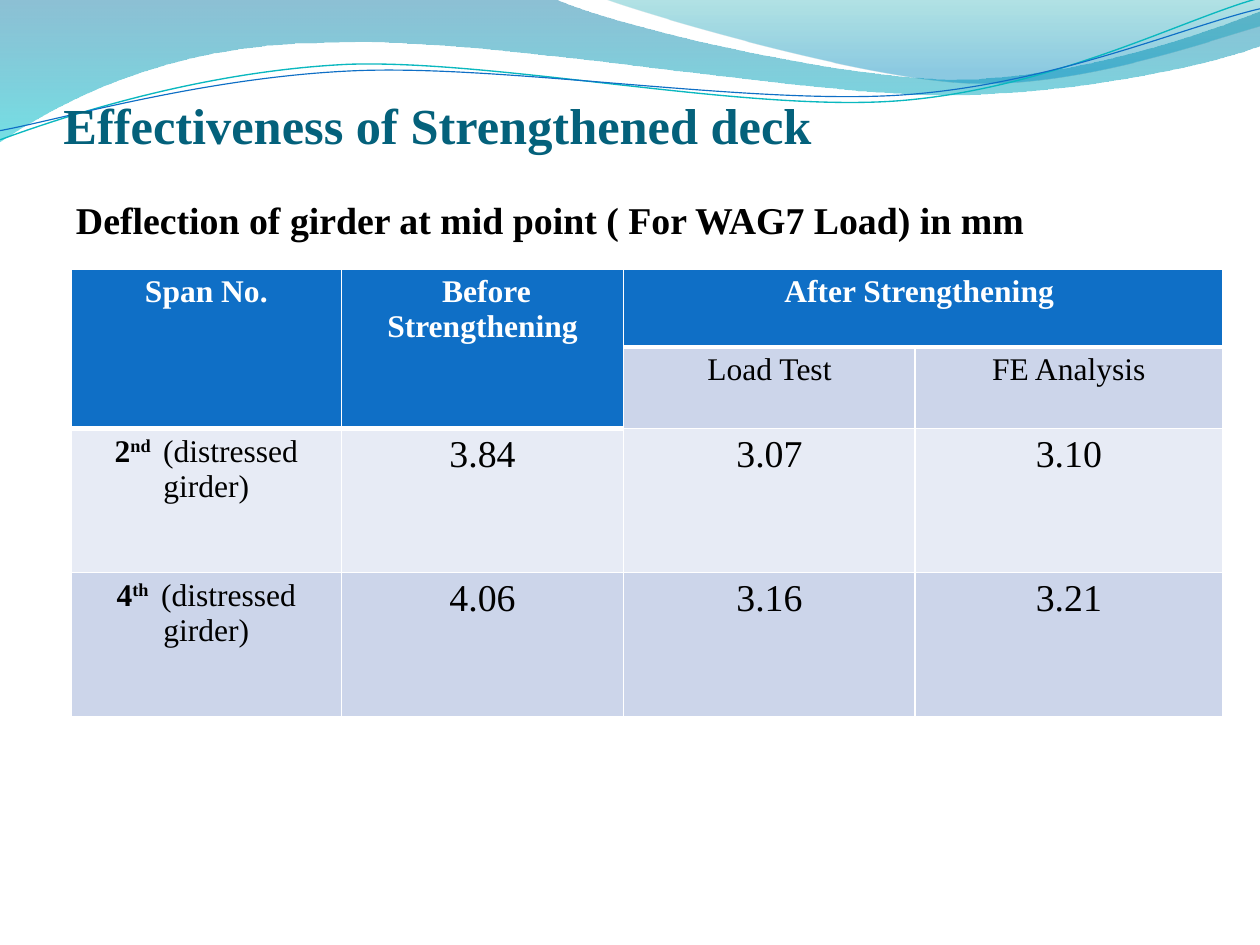
from lxml import etree
from pptx import Presentation
from pptx.dml.color import RGBColor
from pptx.enum.text import MSO_ANCHOR, MSO_AUTO_SIZE, PP_ALIGN
from pptx.oxml.ns import qn
from pptx.util import Inches, Pt

CENTER = PP_ALIGN.CENTER
LEFT = PP_ALIGN.LEFT
TOP = MSO_ANCHOR.TOP
BOTTOM = MSO_ANCHOR.BOTTOM
NO_FIT = MSO_AUTO_SIZE.NONE
FONT = "Times New Roman"
BLUE, PALE, LIGHT = "0F6FC6", "CCD5EA", "E7EBF5"
BLACK, WHITE = "000000", "FFFFFF"


def rgb(color):
    return RGBColor.from_string(color)


def add_run(p, text, size, color, bold=False, raised=False):
    r = p.add_run()
    r.text = text
    r.font.name = FONT
    r.font.size = Pt(size)
    r.font.bold = bold
    r.font.color.rgb = rgb(color)
    if raised:
        r._r.get_or_add_rPr().set("baseline", "30000")


prs = Presentation()
prs.slide_width = Inches(11.11)
prs.slide_height = Inches(8.33)
s = prs.slides.add_slide(prs.slide_layouts[1])

waves = [
    ((0, 0), [(4.89, -0.01), (5.29, 0.19, 7.37, 0.7, 8.43, 0.7),
              (9.48, 0.7, 10.65, 0.28, 11.11, 0.1), (11.12, 0.4),
              (10.93, 0.49, 9.66, 0.84, 8.29, 0.84),
              (6.91, 0.83, 4.24, 0.31, 2.86, 0.38),
              (1.44, 0.39, 0.51, 0.92, -0.01, 1.26)],
     [(0, "0074A1", 45), (1, "00C6CF", 55)], None),
    ((5.32, -0.01), [(5.66, 0.12, 7.58, 0.69, 8.54, 0.73),
                     (9.51, 0.77, 10.68, 0.35, 11.11, 0.23), (11.11, 0)],
     [(0, "00A1A9", 30), (0.8, "008BBF", 45)], None),
    ((-0.02, 0.97), [(0.52, 0.8, 1.76, 0.45, 3.08, 0.45),
                     (4.4, 0.47, 6.56, 1.04, 7.91, 1),
                     (9.25, 0.96, 10.45, 0.4, 11.11, 0.25)],
     None, ("0AB8BF", 0.85)),
    ((-0.02, 0.89), [(0.51, 0.82, 1.82, 0.5, 3.15, 0.51),
                     (4.47, 0.52, 6.63, 0.98, 7.95, 0.95),
                     (9.28, 0.92, 10.47, 0.46, 11.13, 0.34)],
     None, (BLUE, 0.75)),
]
for start, segments, stops, line in waves:
    points = [pair for segment in segments for pair in zip(segment[::2], segment[1::2])]
    builder = s.shapes.build_freeform(*start, scale=Inches(1))
    builder = s.shapes.build_freeform(Inches(start[0]), Inches(start[1]))
    builder.add_line_segments([(Inches(x), Inches(y)) for x, y in points], close=bool(stops))
    sp = builder.convert_to_shape()
    sp.shadow.inherit = False
    steps = iter(list(sp.element.iter(qn("a:lnTo"))))
    for segment in segments:
        step = next(steps)
        if len(segment) == 6:
            curve = etree.Element(qn("a:cubicBezTo"))
            step.addprevious(curve)
            for corner in (step, next(steps), next(steps)):
                curve.append(corner[0])
                corner.getparent().remove(corner)
    if stops:
        sp.line.fill.background()
        sp.fill.gradient()
        sp.fill.gradient_angle = 270
        for stop, (position, color, opacity) in zip(sp.fill.gradient_stops, stops):
            stop.position = position
            stop.color.rgb = rgb(color)
        for clr, (position, color, opacity) in zip(sp.element.iter(qn("a:srgbClr")), stops):
            etree.SubElement(clr, qn("a:alpha")).set("val", str(opacity * 1000))
    else:
        sp.rotation = 357.3
        sp.fill.background()
        sp.line.color.rgb = rgb(line[0])
        sp.line.width = Pt(line[1])

title, body = s.placeholders
headings = [
    (title, 0.86, 0.5, 0, 0, 0, BOTTOM, "Effectiveness of Strengthened deck", 32, "04617B"),
    (body, 1.67, 6.02, 0.11, 0.06, 0.56, TOP,
     "Deflection of girder at mid point ( For WAG7 Load) in mm", 24, BLACK),
]
for sp, top, height, side, bottom, hanging, anchor, text, size, color in headings:
    sp.element.getparent().append(sp.element)
    sp.left, sp.top, sp.width, sp.height = Inches(0.56), Inches(top), Inches(10), Inches(height)
    tf = sp.text_frame
    tf.auto_size = NO_FIT
    tf.word_wrap = True
    tf.vertical_anchor = anchor
    tf.margin_left = tf.margin_right = Inches(side)
    tf.margin_top, tf.margin_bottom = Inches(0.06), Inches(bottom)
    p = tf.paragraphs[0]
    pPr = p._p.get_or_add_pPr()
    pPr.set("marL", str(Inches(hanging)))
    pPr.set("indent", str(-Inches(hanging)))
    etree.SubElement(pPr, qn("a:buNone"))
    p.alignment = LEFT
    p.space_before = Pt(0)
    add_run(p, text, size, color, bold=True)

widths = [2.38, 2.49, 2.57, 2.71]
heights = [0.69, 0.69, 1.27, 1.27]
rows = [
    ["Span No.", " Before Strengthening", "After Strengthening ", ""],
    ["", "", "Load Test", "FE Analysis"],
    [("2", "nd "), "3.84", "3.07", "3.10"],
    [("4", "th "), "4.06", "3.16", "3.21"],
]
table = s.shapes.add_table(4, 4, Inches(0.63), Inches(2.37),
                           Inches(sum(widths)), Inches(sum(heights))).table
for column, width in zip(table.columns, widths):
    column.width = Inches(width)
for row, height in zip(table.rows, heights):
    row.height = Inches(height)
table.cell(0, 0).merge(table.cell(1, 0))
table.cell(0, 1).merge(table.cell(1, 1))
table.cell(0, 2).merge(table.cell(0, 3))

for i, row in enumerate(rows):
    for j, value in enumerate(row):
        cell = table.cell(i, j)
        header = i == 0 or (i == 1 and j < 2)
        cell.fill.solid()
        cell.fill.fore_color.rgb = rgb(BLUE if header else LIGHT if i == 2 else PALE)
        p = cell.text_frame.paragraphs[0]
        p.alignment = CENTER
        if isinstance(value, tuple):
            number, suffix = value
            add_run(p, number, 20, BLACK, bold=True)
            add_run(p, suffix, 20, BLACK, bold=True, raised=True)
            add_run(p, " (distressed girder)", 20, BLACK)
        elif value:
            add_run(p, value, 24 if i > 1 else 20, WHITE if header else BLACK, header)
        tcPr = cell._tc.get_or_add_tcPr()
        sides = ["L", "R", "T", "B"] if i == 0 else ["L", "R", "B"]
        for k, side in enumerate(sides):
            ln = etree.Element(qn("a:ln" + side))
            ln.set("w", str(Pt(3 if header and side == "B" else 1)))
            fill = etree.SubElement(ln, qn("a:solidFill"))
            etree.SubElement(fill, qn("a:srgbClr")).set("val", WHITE)
            tcPr.insert(k, ln)

prs.save("out.pptx")
